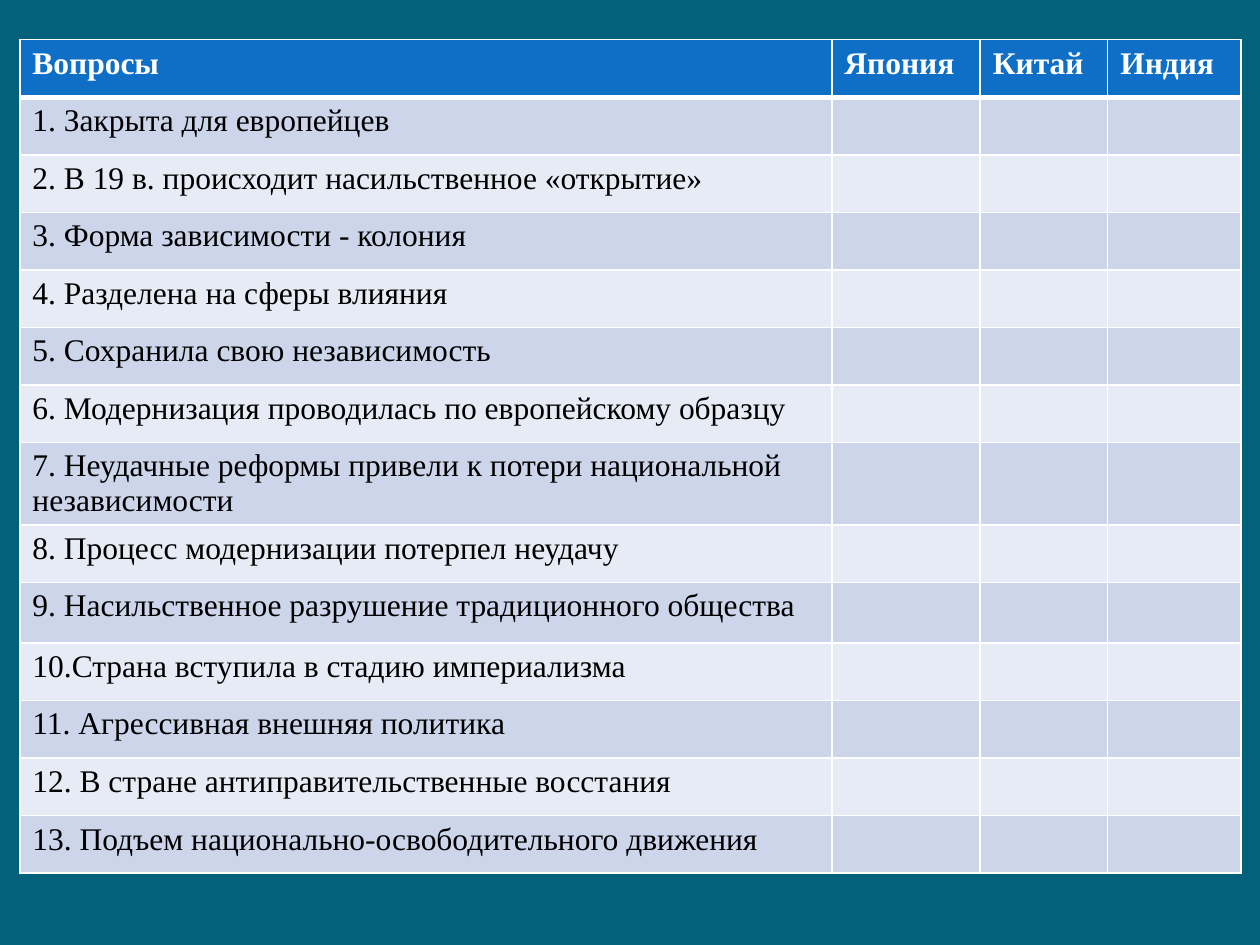
"""Build a slide with a table of questions comparing Japan, China and India."""
from lxml.etree import SubElement
from pptx import Presentation
from pptx.dml.color import RGBColor
from pptx.oxml.ns import qn
from pptx.util import Cm, Pt

COUNTRIES = ["Япония", "Китай", "Индия"]
HEADINGS = ["Вопросы"] + COUNTRIES
QUESTIONS = [
    "1. Закрыта для европейцев",
    "2. В 19 в. происходит насильственное «открытие»",
    "3. Форма зависимости - колония",
    "4. Разделена на сферы влияния",
    "5. Сохранила свою независимость",
    "6. Модернизация проводилась по европейскому образцу",
    "7. Неудачные реформы привели к потери национальной независимости",
    "8. Процесс модернизации потерпел неудачу",
    "9. Насильственное разрушение традиционного общества",
    "10.Страна вступила в стадию империализма",
    "11. Агрессивная внешняя политика",
    "12. В стране антиправительственные восстания",
    "13. Подъем национально-освободительного движения",
]
COLORS = {
    "background": "04617B",
    "header": "0F6FC6",
    "odd": "CCD5EA",
    "even": "E7EBF5",
    "border": "FFFFFF",
    "heading": "FFFFFF",
    "question": "000000",
}
FONT = "Times New Roman"
COLUMN_WIDTHS = [16.37, 2.99, 2.57, 2.69]
ROW_HEIGHT = 1.16
TALL_ROWS = {7: 1.65, 9: 1.22}
LEFT, TOP = 0.4, 0.8


def rgb(name):
    return RGBColor.from_string(COLORS[name])


def add_borders(cell, row):
    properties = cell._tc.get_or_add_tcPr()
    weights = {"L": 1, "R": 1, "T": 3 if row == 1 else 1, "B": 3 if row == 0 else 1}
    for position, (side, weight) in enumerate(weights.items()):
        border = SubElement(properties, qn(f"a:ln{side}"), w=str(Pt(weight)))
        fill = SubElement(border, qn("a:solidFill"))
        SubElement(fill, qn("a:srgbClr"), val=COLORS["border"])
        properties.insert(position, border)


def write(cell, text, color, bold):
    run = cell.text_frame.paragraphs[0].add_run()
    run.text = text
    run.font.name = FONT
    run.font.size = Pt(18)
    run.font.bold = bold
    run.font.color.rgb = rgb(color)


def main():
    presentation = Presentation()
    presentation.slide_width, presentation.slide_height = Cm(25.4), Cm(19.05)
    slide = presentation.slides.add_slide(presentation.slide_layouts[6])
    slide.background.fill.solid()
    slide.background.fill.fore_color.rgb = rgb("background")

    lines = [HEADINGS] + [[question] + [""] * len(COUNTRIES) for question in QUESTIONS]
    heights = [TALL_ROWS.get(row, ROW_HEIGHT) for row in range(len(lines))]
    comparison = slide.shapes.add_table(
        len(lines), len(HEADINGS), Cm(LEFT), Cm(TOP),
        Cm(sum(COLUMN_WIDTHS)), Cm(sum(heights)),
    ).table
    for column, width in zip(comparison.columns, COLUMN_WIDTHS):
        column.width = Cm(width)

    for row, (line, height) in enumerate(zip(lines, heights)):
        comparison.rows[row].height = Cm(height)
        band = "header" if row == 0 else ("even", "odd")[row % 2]
        for column, text in enumerate(line):
            cell = comparison.cell(row, column)
            cell.fill.solid()
            cell.fill.fore_color.rgb = rgb(band)
            add_borders(cell, row)
            if text:
                write(cell, text, "question" if row else "heading", row == 0)

    presentation.save("out.pptx")


if __name__ == "__main__":
    main()
